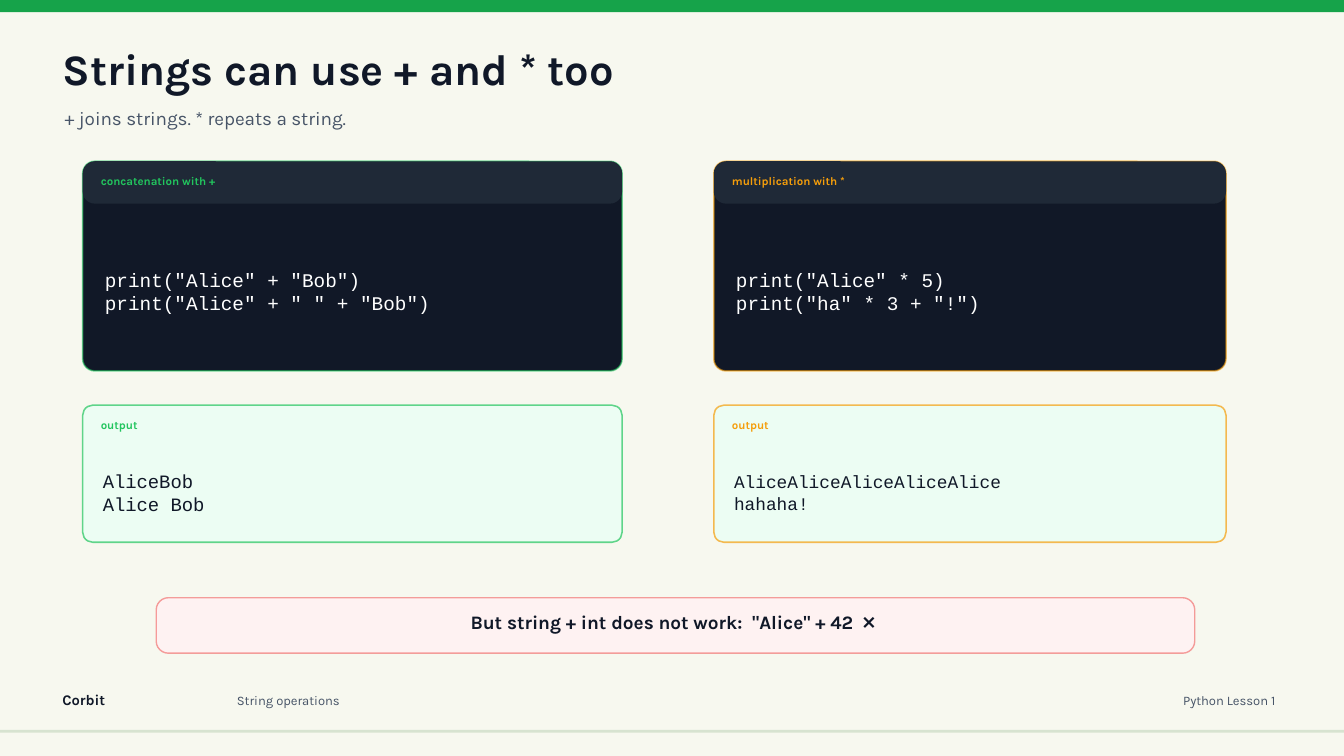
from dataclasses import dataclass

from lxml.etree import SubElement
from pptx import Presentation
from pptx.dml.color import RGBColor
from pptx.enum.shapes import MSO_SHAPE
from pptx.enum.text import MSO_ANCHOR, MSO_AUTO_SIZE, PP_ALIGN
from pptx.oxml.ns import qn
from pptx.util import Inches, Pt

SLIDE_WIDTH, SLIDE_HEIGHT = Inches(13.33), Inches(7.5)
COLUMNS, ROWS = 133.3, 75  # square grid cells
COLUMN, ROW = SLIDE_WIDTH / COLUMNS, SLIDE_HEIGHT / ROWS


@dataclass(frozen=True)
class Theme:
    page: str = "F7F8EF"
    brand: str = "16A34A"
    rule: str = "D7E3D0"
    ink: str = "101828"
    muted: str = "475467"
    green: str = "22C55E"
    amber: str = "F59E0B"
    code_fill: str = "111827"
    code_header: str = "1F2937"
    code_ink: str = "FFFFFF"
    output_fill: str = "ECFDF3"
    warning: str = "EF4444"
    warning_fill: str = "FEF2F2"
    sans: str = "Karla"
    mono: str = "Courier New"
    title_size: float = 31
    subtitle_size: float = 13.5
    code_size: float = 13.8
    warning_size: float = 13.6
    label_size: float = 8.2
    name_size: float = 10.5
    footer_size: float = 9.3


THEME = Theme()


@dataclass(frozen=True)
class Box:
    """A rectangle in grid columns and rows."""
    left: float
    top: float
    width: float
    height: float

    def inner(self, side, top, height):
        return Box(self.left + side, self.top + top, self.width - 2 * side, height)

    def place(self):
        return (round(self.left * COLUMN), round(self.top * ROW),
                round(self.width * COLUMN), round(self.height * ROW))


def write_text(frame, text, size, color=THEME.ink, font=THEME.sans, bold=False,
               align=PP_ALIGN.LEFT):
    frame.word_wrap = True
    frame.auto_size = MSO_AUTO_SIZE.NONE
    frame.vertical_anchor = MSO_ANCHOR.MIDDLE
    frame.margin_left = frame.margin_right = frame.margin_top = frame.margin_bottom = 0
    for index, line in enumerate(text.split("\n")):
        para = frame.add_paragraph() if index else frame.paragraphs[0]
        para.alignment = align
        span = para.add_run()
        span.text = line
        span.font.name, span.font.size, span.font.bold = font, Pt(size), bold
        span.font.color.rgb = RGBColor.from_string(color)


def add_text(page, box, text, size, **style):
    write_text(page.shapes.add_textbox(*box.place()).text_frame, text, size, **style)


def add_panel(page, box, fill, radius=0.0, line=None, line_width=1.1, opacity=100):
    kind = MSO_SHAPE.ROUNDED_RECTANGLE if radius else MSO_SHAPE.RECTANGLE
    panel = page.shapes.add_shape(kind, *box.place())
    panel.shadow.inherit = False
    if radius:
        panel.adjustments[0] = radius / min(box.width, box.height)
    panel.fill.solid()
    panel.fill.fore_color.rgb = RGBColor.from_string(fill)
    if line is None:
        panel.line.fill.background()
        return
    panel.line.color.rgb = RGBColor.from_string(line)
    panel.line.width = Pt(line_width)
    color = panel.line._ln.find(".//" + qn("a:srgbClr"))
    SubElement(color, qn("a:alpha")).set("val", str(opacity * 1000))


def add_heading(page, box, title, subtitle):
    holder = page.shapes.title
    holder.left, holder.top, holder.width, holder.height = Box(
        box.left, box.top, 84, 5.2).place()
    write_text(holder.text_frame, title, THEME.title_size, bold=True)
    add_text(page, Box(box.left + 0.2, box.top + 6, box.width, 3), subtitle,
             THEME.subtitle_size, color=THEME.muted)


def add_code(page, box, label, code, accent):
    add_panel(page, box, THEME.code_fill, radius=1.2, line=accent, opacity=60)
    add_panel(page, box.inner(0, 0, 4.2), THEME.code_header, radius=1.2)
    add_text(page, box.inner(1.8, 1.2, 1.4), label, THEME.label_size,
             color=accent, bold=True)
    add_text(page, box.inner(2.2, 6, box.height - 7), code, THEME.code_size,
             color=THEME.code_ink, font=THEME.mono)


def add_output(page, box, result, size, accent):
    add_panel(page, box, THEME.output_fill, radius=1, line=accent, opacity=70)
    add_text(page, box.inner(1.8, 1.3, 1.4), "output", THEME.label_size,
             color=accent, bold=True)
    add_text(page, box.inner(2, 4.6, box.height - 5.5), result, size, font=THEME.mono)


def add_example(page, box, label, code, result, result_size, accent):
    add_code(page, box.inner(0, 0, 20.8), label, code, accent)
    add_output(page, box.inner(0, 24.2, box.height - 24.2), result, result_size, accent)


def add_warning(page, box, text):
    add_panel(page, box, THEME.warning_fill, radius=1.2, line=THEME.warning,
              line_width=1, opacity=50)
    add_text(page, Box(box.left + 2, box.top + 1.5, box.width - 4.5, 1.7), text,
             THEME.warning_size, bold=True, align=PP_ALIGN.CENTER)


def add_footer(page, box, name, topic, lesson):
    add_text(page, Box(box.left, box.top, 12, 2.2), name, THEME.name_size, bold=True)
    add_text(page, Box(box.left + 17.3, box.top + 0.1, 65, 2.2), topic,
             THEME.footer_size, color=THEME.muted)
    add_text(page, Box(box.left + box.width - 18.5, box.top + 0.1, 18.5, 2.2), lesson,
             THEME.footer_size, color=THEME.muted, align=PP_ALIGN.RIGHT)


def main():
    deck = Presentation()
    deck.slide_width, deck.slide_height = SLIDE_WIDTH, SLIDE_HEIGHT
    page = deck.slides.add_slide(deck.slide_layouts[5])
    page.background.fill.solid()
    page.background.fill.fore_color.rgb = RGBColor.from_string(THEME.page)

    # Top band and bottom rule
    add_panel(page, Box(0, 0, COLUMNS, 1.2), THEME.brand)
    add_panel(page, Box(0, 72.4, COLUMNS, 0.3), THEME.rule)

    # Title and subtitle
    add_heading(page, Box(6.2, 4.2, 106, 9), "Strings can use + and * too",
                "+ joins strings. * repeats a string.")

    # Code with its output, side by side
    add_example(page, Box(8.2, 16, 53.5, 37.8), "concatenation with +",
                'print("Alice" + "Bob")\nprint("Alice" + " " + "Bob")',
                "AliceBob\nAlice Bob", 13.5, THEME.green)
    add_example(page, Box(70.8, 16, 50.8, 37.8), "multiplication with *",
                'print("Alice" * 5)\nprint("ha" * 3 + "!")',
                "AliceAliceAliceAliceAlice\nhahaha!", 12.7, THEME.amber)

    # Warning and footer
    add_warning(page, Box(15.5, 59.3, 103, 5.5),
                'But string + int does not work:  "Alice" + 42  ❌')
    add_footer(page, Box(6.2, 68.3, 120.3, 2.3), "Corbit", "String operations",
               "Python Lesson 1")
    deck.save("out.pptx")


if __name__ == "__main__":
    main()
